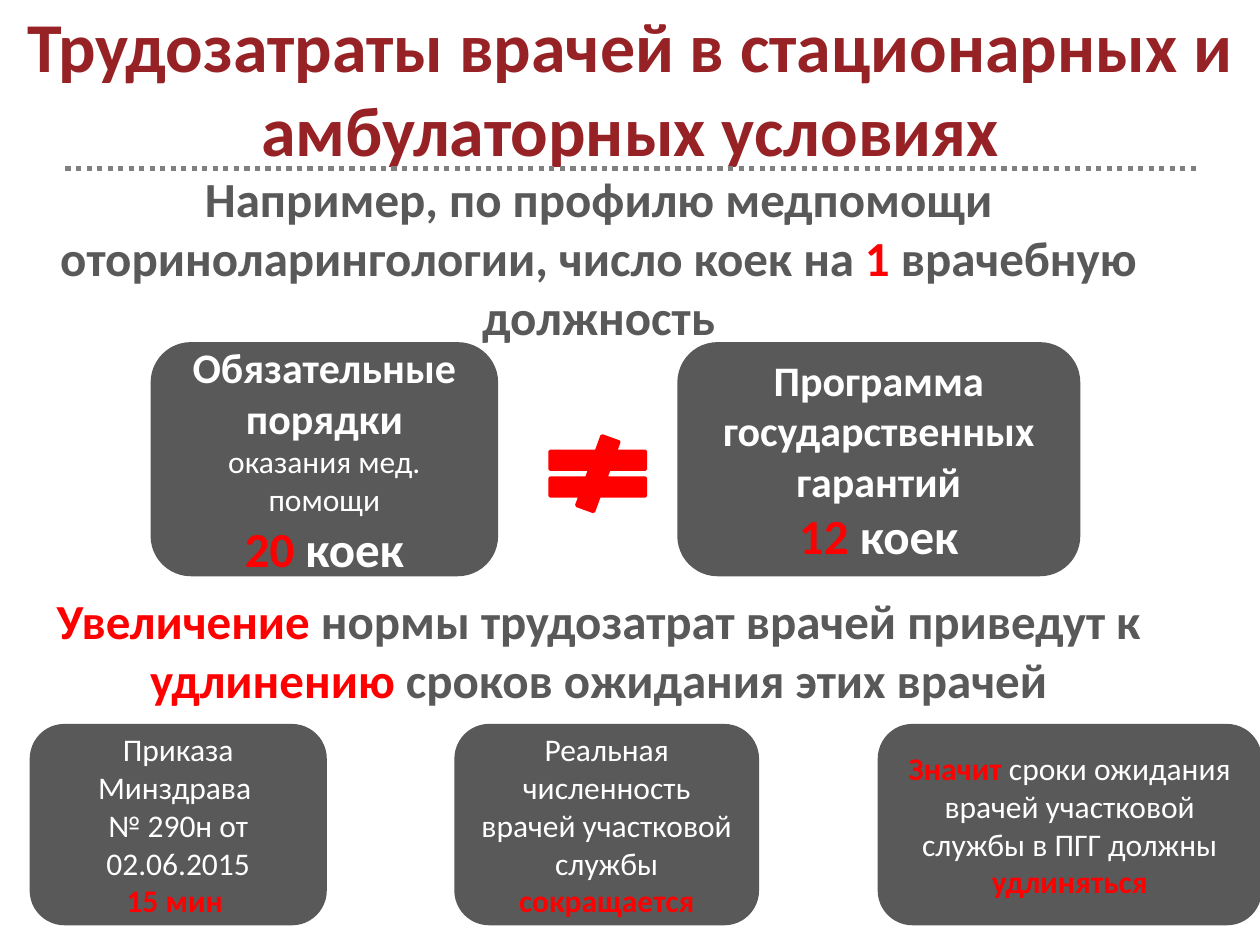
from lxml.etree import SubElement
from pptx import Presentation
from pptx.dml.color import RGBColor as Rgb
from pptx.enum.dml import MSO_LINE as Dash
from pptx.enum.shapes import MSO_CONNECTOR as Conn, MSO_SHAPE as Geo
from pptx.enum.text import MSO_ANCHOR as Anchor, MSO_AUTO_SIZE as Fit, PP_ALIGN as Align
from pptx.oxml.ns import qn
from pptx.util import Inches, Pt

HUES = {"title": "962225", "gray": "595959", "red": "FF0000",
        "white": "FFFFFF", "rule": "808080"}


def write(frame, paras, anchor=Anchor.MIDDLE):
    """Fill a frame; each run is (text, size, hue, bold), "\\n" is a line break."""
    frame.word_wrap = True
    frame.auto_size = Fit.NONE
    frame.vertical_anchor = anchor
    for i, runs in enumerate(paras):
        para = frame.paragraphs[0] if i == 0 else frame.add_paragraph()
        para.alignment = Align.CENTER
        for text, size, hue, bold in runs:
            if text == "\n":
                para.add_line_break()
                continue
            run = para.add_run()
            run.text = text
            font = run.font
            font.name, font.size, font.bold = "Calibri", Pt(size), bold
            font.color.rgb = Rgb.from_string(HUES[hue])


def block(geo, hue, left, top, width, height):
    """Add a shape with fill and line of one hue."""
    shape = slide.shapes.add_shape(
        geo, Inches(left), Inches(top), Inches(width), Inches(height))
    shape.shadow.inherit = False
    color = Rgb.from_string(HUES[hue])
    shape.fill.solid()
    shape.fill.fore_color.rgb = color
    shape.line.color.rgb = color
    shape.line.width = Pt(2)
    return shape


deck = Presentation()
deck.slide_width, deck.slide_height = Inches(10), Inches(7.5)
slide = deck.slides.add_slide(deck.slide_layouts[5])

# Title
title = slide.shapes.title
title.left, title.top = Inches(0), Inches(0.06)
title.width, title.height = Inches(10), Inches(1.25)
write(title.text_frame, [[
    ("Трудозатраты врачей в стационарных и амбулаторных условиях", 40, "title", True)]])

# Dotted rule under the title
rule = slide.shapes.add_connector(
    Conn.STRAIGHT, Inches(0.52), Inches(1.34), Inches(9.5), Inches(1.34))
rule.line.color.rgb = Rgb.from_string(HUES["rule"])
rule.line.width = Pt(3)
rule.line.dash_style = Dash.ROUND_DOT
SubElement(rule.line._get_or_add_ln().getparent(), qn("a:effectLst"))

# Statements
notes = [
    (1.29, 1.5, [("Например, по профилю медпомощи оториноларингологии, число коек на ",
                  28, "gray", True),
                 ("1 ", 28, "red", True),
                 ("врачебную должность", 28, "gray", True)]),
    (4.64, 1.05, [("Увеличение", 28, "red", True),
                  (" нормы трудозатрат врачей приведут к ", 28, "gray", True),
                  ("удлинению", 28, "red", True),
                  (" сроков ожидания этих врачей", 28, "gray", True)]),
]
for top, height, runs in notes:
    box = slide.shapes.add_textbox(Inches(0.25), Inches(top), Inches(9), Inches(height))
    write(box.text_frame, [runs], Anchor.TOP)

# Cards: left, width, paragraphs, grouped by row (top, height)
rows = [
    (2.73, 1.83, [
        (1.21, 2.73, [
            [("Обязательные порядки", 24, "white", True)],
            [("оказания мед. помощи", 18, "white", False)],
            [("20 ", 28, "red", True), ("коек", 28, "white", True)]]),
        (5.39, 3.17, [
            [("Программа государственных гарантий", 24, "white", True)],
            [("12", 28, "red", True), (" коек", 28, "white", True)]]),
    ]),
    (5.76, 1.57, [
        (0.25, 2.33, [
            [("Приказа Минздрава ", 18, "white", False), ("\n", 18, "white", False),
             ("№ 290н от 02.06.2015", 18, "white", False)],
            [("15 мин ", 18, "red", True)]]),
        (3.62, 2.39, [
            [("Реальная численность врачей участковой службы", 18, "white", False)],
            [("сокращается", 18, "red", True)]]),
        (6.98, 3.02, [
            [("Значит", 18, "red", True),
             (" сроки ожидания врачей участковой службы в ПГГ должны",
              18, "white", False)],
            [("удлиняться", 18, "red", True)]]),
    ]),
]
for top, height, cards in rows:
    for left, width, paras in cards:
        card = block(Geo.ROUNDED_RECTANGLE, "gray", left, top, width, height)
        write(card.text_frame, paras)

# Not-equal sign between the upper cards
block(Geo.MATH_NOT_EQUAL, "red", 4.23, 3.46, 1.03, 0.6)

deck.save("out.pptx")
